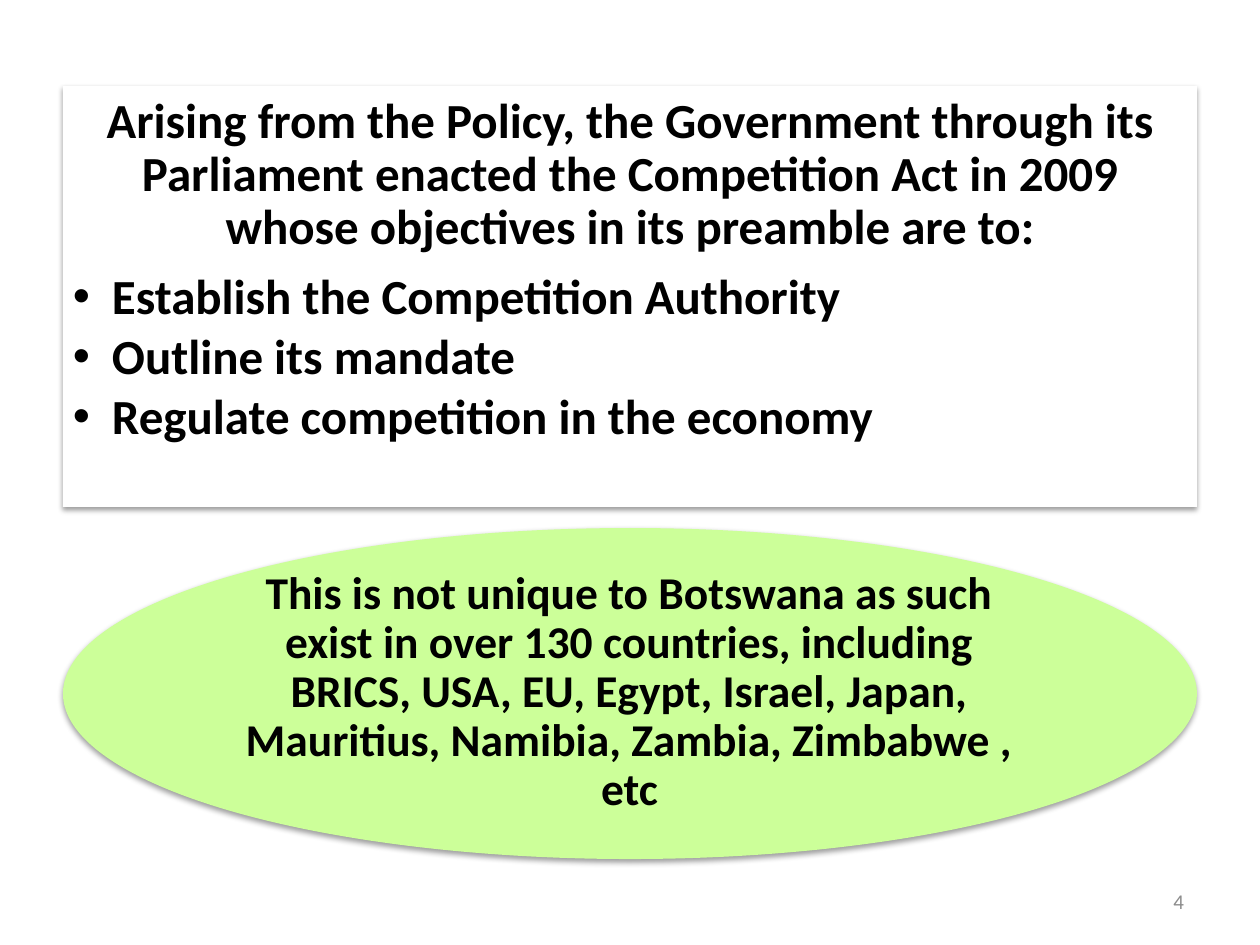
"""Build the slide on the objectives of the Competition Act."""
from lxml.etree import SubElement
from pptx import Presentation
from pptx.dml.color import RGBColor as Rgb
from pptx.enum.shapes import MSO_SHAPE as Form
from pptx.enum.text import MSO_ANCHOR as Anchor, PP_ALIGN as Align
from pptx.oxml.ns import qn
from pptx.util import Emu, Pt

HUE = {"white": "FFFFFF", "green": "CCFF99", "black": "000000", "gray": "8C8C8C"}
FONT = "Calibri"
INDENT = 39

LEAD = ("Arising from the Policy, the Government through its Parliament "
        "enacted the Competition Act in 2009 whose objectives in its preamble are to:")
AIMS = ["Establish the Competition Authority", "Outline its mandate",
        "Regulate competition in the economy"]
NOTE = ("This is not unique to Botswana as such exist in over 130 countries, including "
        "BRICS, USA, EU, Egypt, Israel, Japan, Mauritius, Namibia, Zambia, Zimbabwe , etc")

PANEL = (63, 86, 1134, 421)
OVAL = (63, 528, 1134, 331)
INNER = (229, 576, 801, 234)
NUMBER = (903, 876, 294, 50)


def px(n):
    return Emu(round(n * 914400 / 126))


def add_form(slide, kind, box, hue):
    form = slide.shapes.add_shape(kind, *map(px, box))
    form.fill.solid()
    form.fill.fore_color.rgb = Rgb.from_string(HUE[hue])
    form.line.fill.background()
    form.shadow.inherit = False
    effects = form._element.spPr.find(qn("a:effectLst"))
    shade = SubElement(effects, qn("a:outerShdw"), blurRad="40000", dist="20000",
                       dir="5400000", rotWithShape="0")
    color = SubElement(shade, qn("a:srgbClr"), val=HUE["black"])
    SubElement(color, qn("a:alpha"), val="38000")


def add_frame(slide, box, pad, anchor):
    frame = slide.shapes.add_textbox(*map(px, box)).text_frame
    frame.word_wrap = True
    frame.vertical_anchor = anchor
    frame.margin_left = frame.margin_right = px(pad[0])
    frame.margin_top = frame.margin_bottom = px(pad[1])
    return frame


def write(para, text, size, align, after=0, hue="black", bold=True, bullet=False):
    para.text = text
    para.alignment = align
    if after:
        para.line_spacing = 0.9
        para.space_after = Pt(after)
    if bullet:
        props = para._p.get_or_add_pPr()
        props.set("lvl", "1")
        props.set("marL", str(px(INDENT)))
        props.set("indent", str(-px(INDENT)))
        SubElement(props, qn("a:buFont"), typeface="Arial")
        SubElement(props, qn("a:buChar"), char="•")
    font = para.font
    font.name, font.size, font.bold = FONT, Pt(size), bold
    font.color.rgb = Rgb.from_string(HUE[hue])


def main():
    deck = Presentation()
    deck.slide_width, deck.slide_height = px(1260), px(945)
    slide = deck.slides.add_slide(deck.slide_layouts[6])

    add_form(slide, Form.RECTANGLE, PANEL, "white")
    frame = add_frame(slide, PANEL, (10, 10), Anchor.TOP)
    write(frame.paragraphs[0], LEAD, 28, Align.CENTER, 9.8)
    for aim in AIMS:
        write(frame.add_paragraph(), aim, 28, Align.JUSTIFY, 4.2, bullet=True)

    add_form(slide, Form.OVAL, OVAL, "green")
    frame = add_frame(slide, INNER, (9, 9), Anchor.MIDDLE)
    write(frame.paragraphs[0], NOTE, 26, Align.CENTER, 9.1)

    frame = add_frame(slide, NUMBER, (13, 6), Anchor.MIDDLE)
    write(frame.paragraphs[0], "4", 12, Align.RIGHT, hue="gray", bold=False)
    deck.save("out.pptx")


if __name__ == "__main__":
    main()
